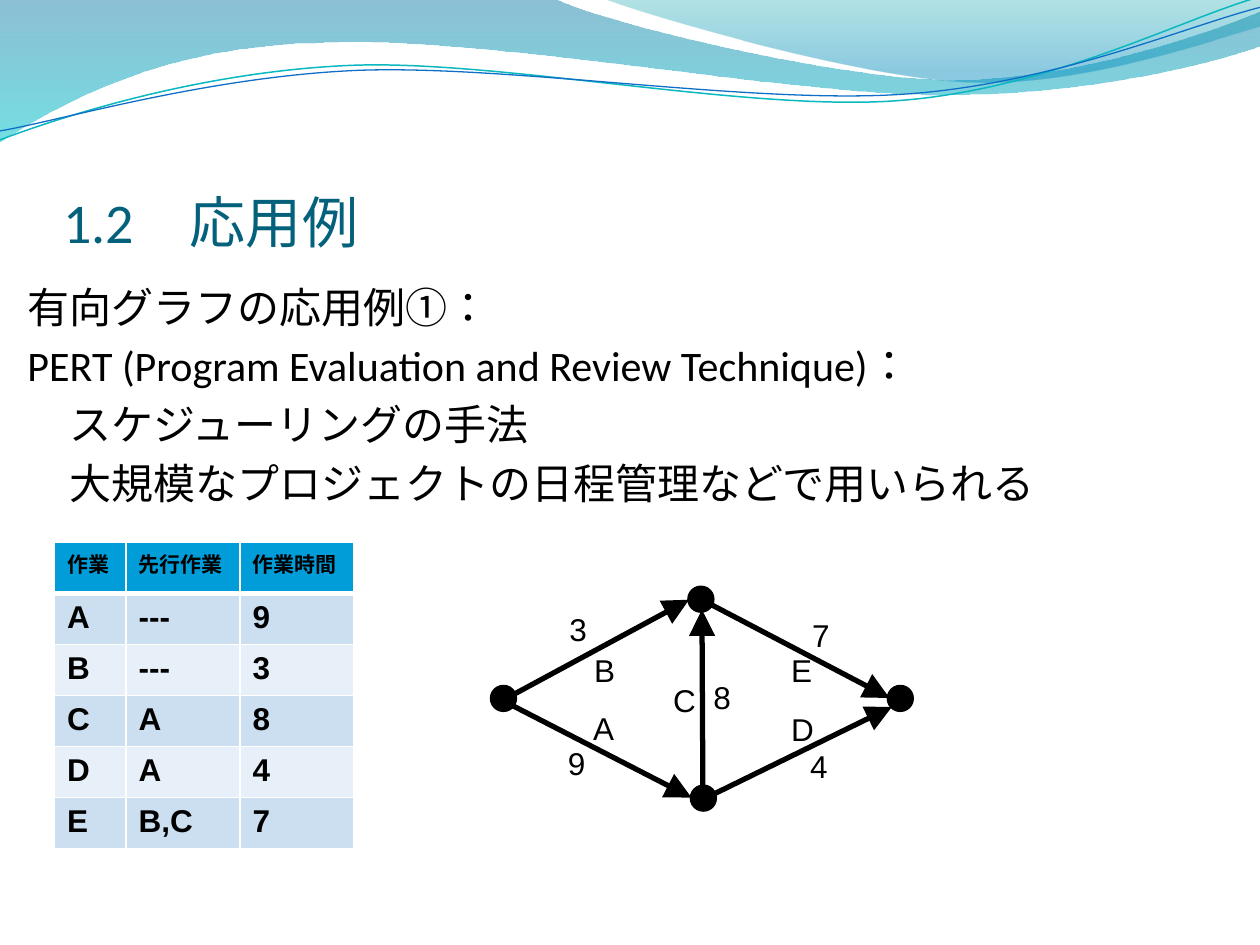
"""Build a slide on PERT as an application of directed graphs."""
from dataclasses import dataclass

from lxml import etree
from pptx import Presentation
from pptx.dml.color import RGBColor
from pptx.enum.shapes import MSO_CONNECTOR, MSO_SHAPE
from pptx.enum.text import MSO_ANCHOR, MSO_AUTO_SIZE, PP_ALIGN
from pptx.oxml.ns import qn
from pptx.util import Cm, Pt

STRAIGHT = MSO_CONNECTOR.STRAIGHT
OVAL = MSO_SHAPE.OVAL
BOTTOM = MSO_ANCHOR.BOTTOM
NO_FIT, FIT_SHAPE = MSO_AUTO_SIZE.NONE, MSO_AUTO_SIZE.SHAPE_TO_FIT_TEXT
LEFT = PP_ALIGN.LEFT


@dataclass(frozen=True)
class Theme:
    """Fonts, type sizes in points and colours of the slide."""
    text_font: str = "Calibri"
    graph_font: str = "Arial"
    title_size: int = 32
    body_size: int = 24
    graph_size: int = 18
    header_size: int = 12
    ink: str = "000000"
    title: str = "04617B"
    rule: str = "FFFFFF"
    header: str = "009DD9"
    bands: tuple = ("CCDFF1", "E7EFF8")


THEME = Theme()

TITLE = "1.2　応用例"
BODY = (
    "有向グラフの応用例①：",
    "PERT (Program Evaluation and Review Technique)：",
    "　スケジューリングの手法",
    "　大規模なプロジェクトの日程管理などで用いられる",
)
TABLE_HEADER = ("作業", "先行作業", "作業時間")
TASKS = (("A", "---", "9"), ("B", "---", "3"), ("C", "A", "8"),
         ("D", "A", "4"), ("E", "B,C", "7"))

NODES = ((9.91, 13.84), (13.89, 11.84), (13.94, 15.85), (17.91, 13.84))
EDGES = {
    "A": ((10.13, 14.12), (13.94, 16.08)),
    "B": ((10.13, 14.12), (13.89, 12.09)),
    "C": ((14.17, 16.08), (14.15, 12.29)),
    "D": ((14.2, 16.1), (17.98, 14.25)),
    "E": ((14.15, 12.09), (17.93, 14.07)),
}
NAME_SPOTS = {"A": (11.71, 14.16), "B": (11.73, 13), "C": (13.32, 13.6),
              "D": (15.7, 14.19), "E": (15.7, 13)}
TIME_SPOTS = {"A": (11.2, 14.87), "B": (11.23, 12.17), "C": (14.13, 13.54),
              "D": (16.08, 14.93), "E": (16.12, 12.29)}

BANDS = (
    ([(0, -0.03), [(11.18, -0.03)],
      [(12.09, 0.43), (16.87, 1.6), (19.25, 1.6)],
      [(21.67, 1.6), (24.33, 0.66), (25.4, 0.23)], [(25.43, 0.91)],
      [(24.97, 1.12), (22.1, 1.93), (18.95, 1.91)],
      [(15.8, 1.91), (9.7, 0.71), (6.53, 0.86)],
      [(3.28, 0.89), (1.17, 2.11), (-0.03, 2.87)]],
     ((0, "0074A1", 45), (1, "00C6CF", 55))),
    ([(12.17, -0.03),
      [(12.93, 0.28), (17.32, 1.57), (19.53, 1.65)],
      [(21.74, 1.75), (24.41, 0.81), (25.4, 0.53)], [(25.4, 0)]],
     ((0, "00A1A9", 30), (0.8, "008BBF", 45))),
)
STRANDS = (
    ([(0, 2.82), [(1.22, 2.36), (4.01, 1.45), (7.04, 1.32)],
      [(10.03, 1.19), (15.06, 2.26), (18.11, 2.03)],
      [(21.16, 1.8), (23.83, 0.38), (25.35, -0.05)]], "0AB8BF", 0.85),
    ([(0, 2.64), [(1.19, 2.44), (4.17, 1.55), (7.19, 1.42)],
      [(10.24, 1.3), (15.16, 2.11), (18.21, 1.9)],
      [(21.23, 1.7), (23.9, 0.53), (25.4, 0.15)]], "0F6FC6", 0.75),
)


def rgb(code):
    """Return the colour for a hexadecimal code."""
    return RGBColor.from_string(code)


def set_font(paragraph, name, size, color, bold=False):
    """Set the font and the Japanese language of a paragraph."""
    font = paragraph.font
    font.name, font.size, font.bold = name, Pt(size), bold
    font.color.rgb = rgb(color)
    for run in paragraph.runs:
        run._r.get_or_add_rPr().set("lang", "ja-JP")


def place(shape, left, top, width, height):
    """Move and size a shape, in centimetres."""
    shape.left, shape.top = Cm(left), Cm(top)
    shape.width, shape.height = Cm(width), Cm(height)


def add_wave(slide, outline, close):
    """Add an outline whose three-point segments are Bézier curves."""
    start, *segments = outline
    points = [tuple(map(Cm, point)) for part in segments for point in part]
    builder = slide.shapes.build_freeform(*map(Cm, start))
    builder.add_line_segments(points, close=close)
    wave = builder.convert_to_shape()
    wave.shadow.inherit = False
    steps = iter(list(wave.element.spPr.iter(qn("a:lnTo"))))
    for segment in segments:
        first, *others = [next(steps) for _ in segment]
        if others:
            first.tag = qn("a:cubicBezTo")
            for step in others:
                first.append(step[0])
                step.getparent().remove(step)
    return wave


def add_band(slide, outline, stops):
    """Add a wave filled with a translucent vertical gradient."""
    band = add_wave(slide, outline, True)
    band.line.fill.background()
    band.fill.gradient()
    band.fill.gradient_angle = 270
    for stop, (position, color, _) in zip(band.fill.gradient_stops, stops):
        stop.position = position
        stop.color.rgb = rgb(color)
    colors = list(band.element.spPr.iter(qn("a:srgbClr")))
    for color, (_, _, opacity) in zip(colors, stops):
        etree.SubElement(color, qn("a:alpha"), val=str(opacity * 1000))


def add_strand(slide, outline, color, width):
    """Add a thin wavy line."""
    strand = add_wave(slide, outline, False)
    strand.fill.background()
    strand.line.color.rgb = rgb(color)
    strand.line.width = Pt(width)


def fill_title(title):
    """Place and format the title."""
    place(title, 1.27, 1.96, 22.86, 3.18)
    frame = title.text_frame
    frame.text = TITLE
    frame.auto_size, frame.vertical_anchor = NO_FIT, BOTTOM
    frame.margin_left = frame.margin_right = frame.margin_bottom = 0
    paragraph = frame.paragraphs[0]
    paragraph.alignment = LEFT
    set_font(paragraph, THEME.text_font, THEME.title_size, THEME.title)


def fill_body(body):
    """Place the body and write its lines without bullets."""
    place(body, 0.3, 5.54, 23.7, 12.19)
    frame = body.text_frame
    frame.text = "\n".join(BODY)
    frame.auto_size = NO_FIT
    for paragraph in frame.paragraphs:
        properties = paragraph._p.get_or_add_pPr()
        properties.set("marL", str(Cm(0.76)))
        properties.set("indent", str(Cm(-0.76)))
        etree.SubElement(properties, qn("a:buNone"))
        set_font(paragraph, THEME.text_font, THEME.body_size, THEME.ink)


def format_cell(cell, text, size, color, bottom=1):
    """Write a bold cell with a fill and white borders."""
    cell.text = text
    set_font(cell.text_frame.paragraphs[0], THEME.graph_font, size,
             THEME.ink, bold=True)
    properties = cell._tc.get_or_add_tcPr()
    for side, width in (("L", 1), ("R", 1), ("T", 1), ("B", bottom)):
        border = etree.SubElement(properties, qn(f"a:ln{side}"),
                                  w=str(Pt(width)))
        paint = etree.SubElement(border, qn("a:solidFill"))
        etree.SubElement(paint, qn("a:srgbClr"), val=THEME.rule)
    cell.fill.solid()
    cell.fill.fore_color.rgb = rgb(color)


def add_task_table(slide):
    """Add the table of tasks, predecessors and durations."""
    rows = len(TASKS) + 1
    table = slide.shapes.add_table(rows, 3, Cm(1.1), Cm(10.93), Cm(6.04),
                                   Cm(1.03 * rows)).table
    for column, width in zip(table.columns, (1.44, 2.3, 2.3)):
        column.width = Cm(width)
    for index, text in enumerate(TABLE_HEADER):
        format_cell(table.cell(0, index), text, THEME.header_size,
                    THEME.header, bottom=3)
    for row, task in enumerate(TASKS, 1):
        for index, text in enumerate(task):
            format_cell(table.cell(row, index), text, THEME.graph_size,
                        THEME.bands[(row - 1) % 2])


def add_node(graph, left, top):
    """Add a black graph node."""
    node = graph.shapes.add_shape(OVAL, Cm(left), Cm(top), Cm(0.48), Cm(0.48))
    node.shadow.inherit = False
    node.fill.solid()
    node.fill.fore_color.rgb = node.line.color.rgb = rgb(THEME.ink)
    node.line.width = Pt(2)


def add_edge(graph, tail, tip):
    """Add an arrow between two points."""
    edge = graph.shapes.add_connector(STRAIGHT, *map(Cm, tail + tip))
    edge.line.color.rgb = rgb(THEME.ink)
    edge.line.width = Pt(3)
    etree.SubElement(edge.line._get_or_add_ln(), qn("a:tailEnd"),
                     type="triangle", w="lg", len="lg")
    etree.SubElement(edge._element.spPr, qn("a:effectLst"))


def add_label(graph, text, spot, width):
    """Add a one-character label of the graph."""
    label = graph.shapes.add_textbox(*map(Cm, spot), Cm(width), Cm(1.02))
    frame = label.text_frame
    frame.word_wrap, frame.auto_size = False, FIT_SHAPE
    frame.text = text
    set_font(frame.paragraphs[0], THEME.graph_font, THEME.graph_size,
             THEME.ink)


def main():
    """Build and save the slide."""
    deck = Presentation()
    deck.slide_width, deck.slide_height = Cm(25.4), Cm(19.05)
    slide = deck.slides.add_slide(deck.slide_layouts[1])
    for outline, stops in BANDS:
        add_band(slide, outline, stops)
    for outline, color, width in STRANDS:
        add_strand(slide, outline, color, width)
    fill_title(slide.shapes.title)
    fill_body(slide.placeholders[1])
    add_task_table(slide)
    graph = slide.shapes.add_group_shape()
    for spot in NODES:
        add_node(graph, *spot)
    for name, _, time in TASKS:
        add_edge(graph, *EDGES[name])
        add_label(graph, name, NAME_SPOTS[name], 0.95)
        add_label(graph, time, TIME_SPOTS[name], 0.86)
    deck.save("out.pptx")


if __name__ == "__main__":
    main()
